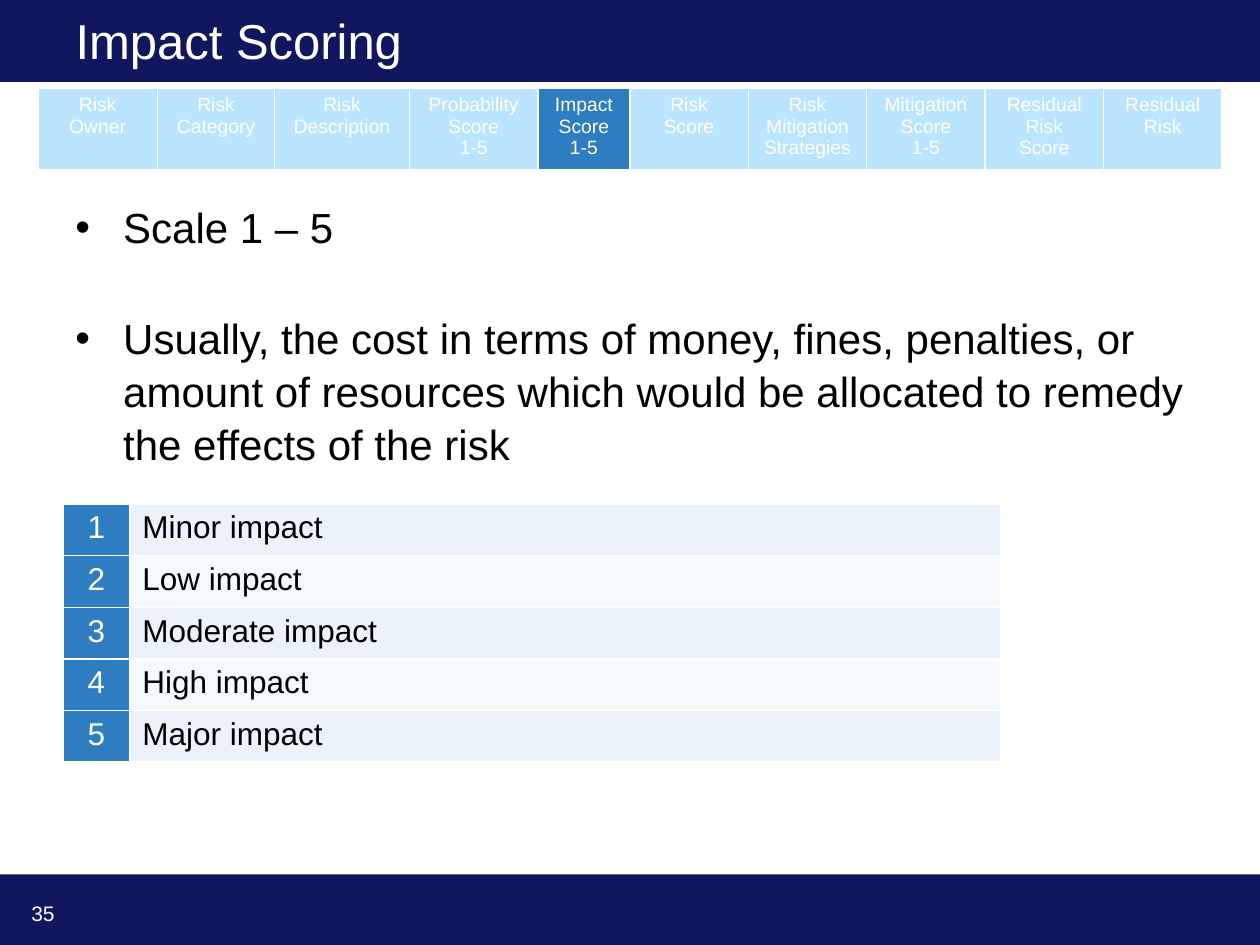
"""Build the Impact Scoring slide with its register strip and five-point scale."""
from lxml.etree import SubElement
from pptx import Presentation
from pptx.dml.color import RGBColor
from pptx.enum.shapes import MSO_SHAPE as SHAPE
from pptx.enum.text import MSO_ANCHOR as ANCHOR, MSO_AUTO_SIZE as AUTO, PP_ALIGN as ALIGN
from pptx.oxml.ns import qn
from pptx.util import Inches, Pt

NAVY = RGBColor(0x11, 0x17, 0x5E)
BLUE = RGBColor(0x2F, 0x7D, 0xC1)
SKY = RGBColor(0xBB, 0xE4, 0xFF)
BANDS = RGBColor(0xEC, 0xF2, 0xF9), RGBColor(0xF6, 0xF9, 0xFC)
WHITE = RGBColor(0xFF, 0xFF, 0xFE)
BLACK = RGBColor(0, 0, 0)

WIDTH, HEIGHT = 10, 7.5
MARGIN = 0.05 * WIDTH
TITLE = "Impact Scoring"
PAGE = "35"
CURRENT = "Impact Score\v1-5"
STEPS = [
    ("Risk Owner", 0.95), ("Risk Category", 0.93), ("Risk Description", 1.07),
    ("Probability Score\v1-5", 1.02), (CURRENT, 0.73), ("Risk\vScore", 0.94),
    ("Risk Mitigation Strategies", 0.94), ("Mitigation Score\v1-5", 0.94),
    ("Residual Risk Score", 0.94), ("Residual Risk", 0.94),
]
POINTS = [
    "Scale 1 – 5",
    "Usually, the cost in terms of money, fines, penalties, or amount of resources "
    "which would be allocated to remedy the effects of the risk",
]
LEVELS = ["Minor impact", "Low impact", "Moderate impact", "High impact", "Major impact"]
LEVEL_COLS = [0.53, 6.91]
LEVEL_ROW = 0.41


def add_text(p, text, size, color):
    for i, part in enumerate(text.split("\v")):
        if i:
            p.add_line_break()
        r = p.add_run()
        r.text = part
        r.font.name, r.font.size = "Arial", Pt(size)
        r.font.color.rgb = color


def add_box(s, left, top, width, height):
    tf = s.shapes.add_textbox(*map(Inches, (left, top, width, height))).text_frame
    tf.word_wrap = True
    return tf


def add_band(s, top, height):
    sp = s.shapes.add_shape(SHAPE.RECTANGLE, 0, Inches(top), Inches(WIDTH), Inches(height))
    sp.shadow.inherit = False
    sp.fill.solid()
    sp.fill.fore_color.rgb = NAVY
    sp.line.fill.background()


def add_bullet(p):
    pr = p._p.get_or_add_pPr()
    pr.set("marL", str(Inches(0.38)))
    pr.set("indent", str(-Inches(0.38)))
    SubElement(pr, qn("a:buFont"), typeface="Arial")
    SubElement(pr, qn("a:buChar"), char="•")


def fill_cell(cell, text, size, color, fill, align):
    p = cell.text_frame.paragraphs[0]
    p.alignment = align
    add_text(p, text, size, color)
    pr = cell._tc.get_or_add_tcPr()
    for side in ("a:lnL", "a:lnR", "a:lnT", "a:lnB"):
        ln = SubElement(pr, qn(side), w=str(Pt(1)))
        SubElement(SubElement(ln, qn("a:solidFill")), qn("a:srgbClr"), val=str(WHITE))
    cell.fill.solid()
    cell.fill.fore_color.rgb = fill


def add_grid(s, left, top, widths, rows, row_height):
    frame = s.shapes.add_table(rows, len(widths), Inches(left), Inches(top),
                               Inches(sum(widths)), Inches(row_height * rows))
    table = frame.table
    table.first_row = table.horz_banding = False
    for col, width in zip(table.columns, widths):
        col.width = Inches(width)
    return table


def main():
    prs = Presentation()
    prs.slide_width, prs.slide_height = Inches(WIDTH), Inches(HEIGHT)
    s = prs.slides.add_slide(prs.slide_layouts[5])
    s.background.fill.solid()
    s.background.fill.fore_color.rgb = WHITE

    add_band(s, 6.94, HEIGHT - 6.94)
    add_band(s, 0, 0.65)

    title = s.shapes.title
    s.shapes.element.append(title.element)
    title.left, title.top = Inches(MARGIN), Inches(0.12)
    title.width, title.height = Inches(WIDTH - 2 * MARGIN), Inches(0.4)
    tf = title.text_frame
    tf.auto_size, tf.vertical_anchor = AUTO.NONE, ANCHOR.MIDDLE
    tf.paragraphs[0].alignment = ALIGN.LEFT
    add_text(tf.paragraphs[0], TITLE, 28, WHITE)

    add_text(add_box(s, 0.15, 7.1, 2.69, 0.4).paragraphs[0], PAGE, 12, WHITE)

    tf = add_box(s, MARGIN, 1.53, WIDTH - 2 * MARGIN, 2.3)
    for i, point in enumerate(POINTS):
        p = tf.add_paragraph() if i else tf.paragraphs[0]
        add_bullet(p)
        p.line_spacing = 1.05
        p.space_before = Pt(33.5 if i else 0)
        add_text(p, point, 24, BLACK)

    strip = add_grid(s, 0.3, 0.7, [width for _, width in STEPS], 1, 0.49)
    for i, (step, _) in enumerate(STEPS):
        fill_cell(strip.cell(0, i), step, 11, WHITE,
                  BLUE if step == CURRENT else SKY, ALIGN.CENTER)

    scale = add_grid(s, MARGIN, 4, LEVEL_COLS, len(LEVELS), LEVEL_ROW)
    for i, level in enumerate(LEVELS):
        scale.rows[i].height = Inches(LEVEL_ROW)
        fill_cell(scale.cell(i, 0), str(i + 1), 18, WHITE, BLUE, ALIGN.CENTER)
        fill_cell(scale.cell(i, 1), level, 18, BLACK, BANDS[i % 2], ALIGN.LEFT)

    prs.save("out.pptx")


if __name__ == "__main__":
    main()
